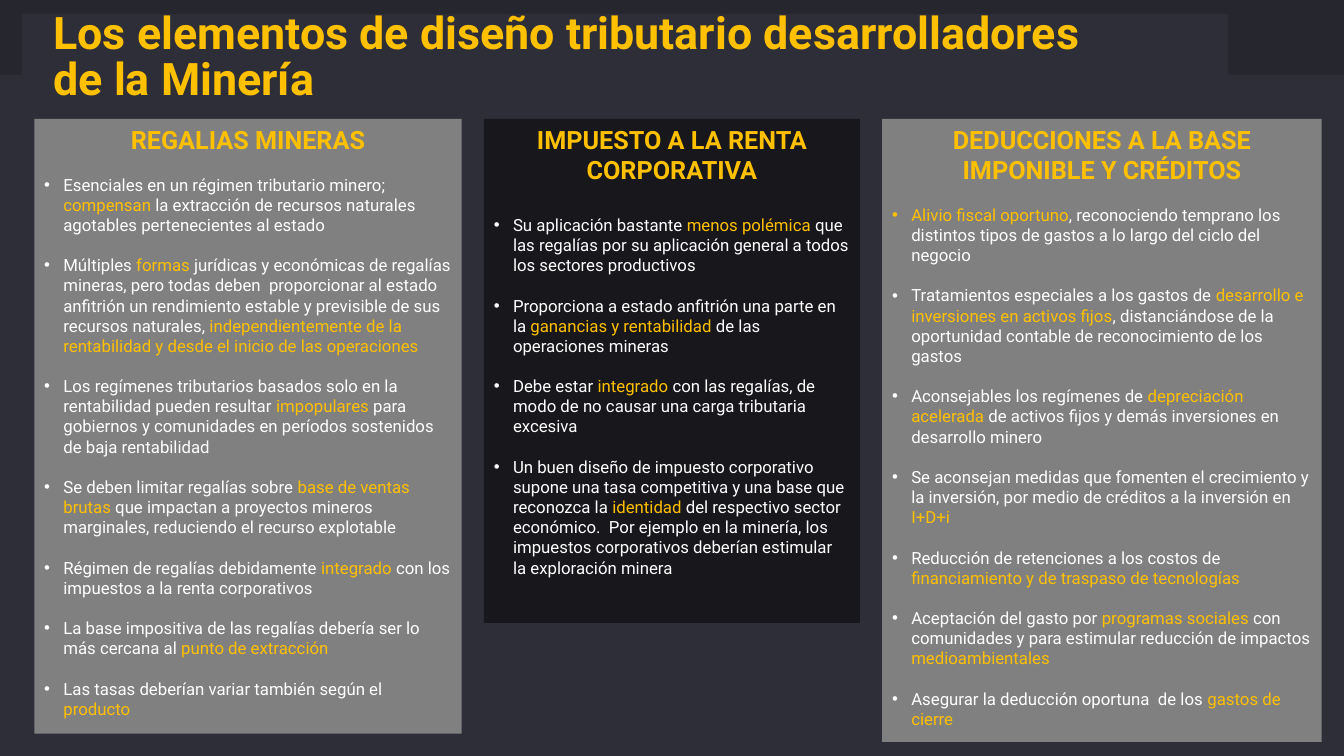
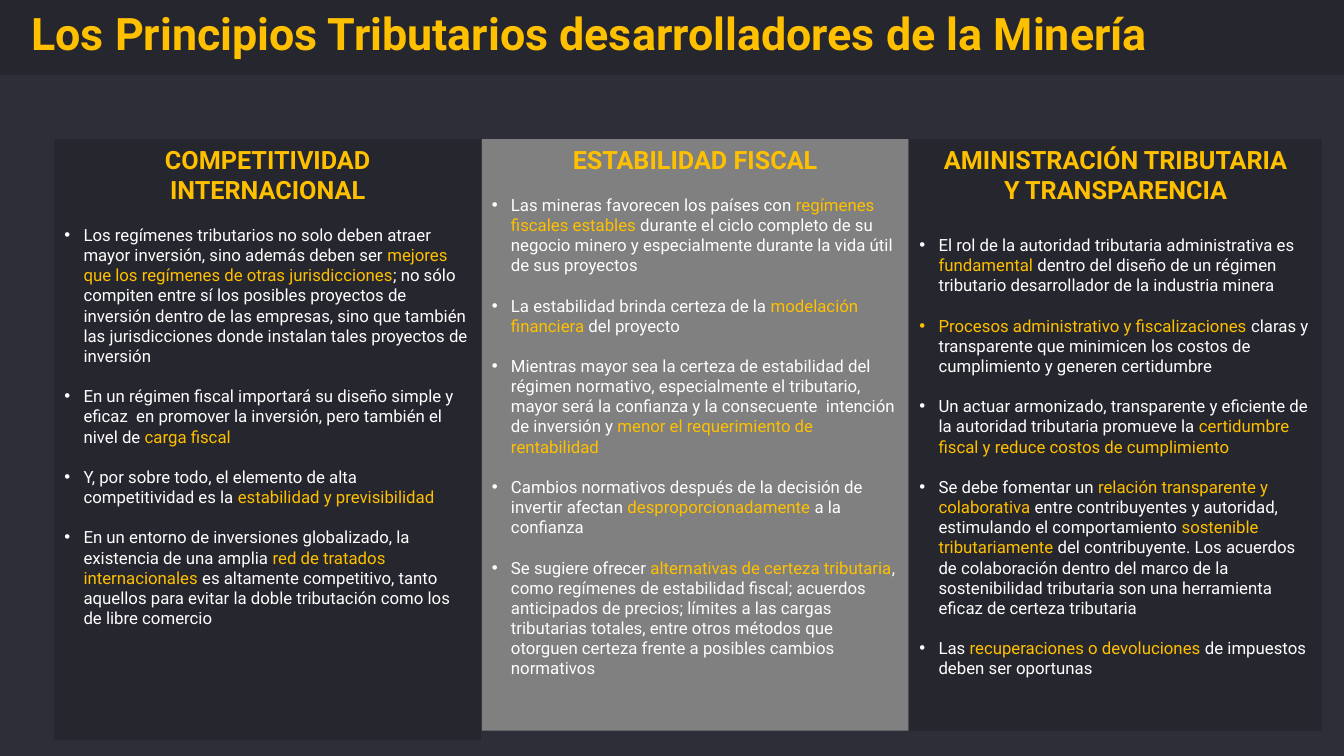
from lxml import etree
from pptx import Presentation
from pptx.dml.color import RGBColor
from pptx.enum.shapes import MSO_SHAPE
from pptx.enum.text import MSO_ANCHOR, MSO_AUTO_SIZE, PP_ALIGN
from pptx.oxml.ns import qn
from pptx.util import Inches, Pt

RECT = MSO_SHAPE.RECTANGLE
TOP, MIDDLE = MSO_ANCHOR.TOP, MSO_ANCHOR.MIDDLE
LEFT, CENTER = PP_ALIGN.LEFT, PP_ALIGN.CENTER

BACK = RGBColor(0x2E, 0x2E, 0x38)
DARK = RGBColor(0x26, 0x26, 0x2E)
BLACK = RGBColor(0x17, 0x17, 0x1C)
GRAY = RGBColor(0x80, 0x80, 0x80)
GOLD = RGBColor(0xFF, 0xC0, 0x00)
WHITE = RGBColor(0xFF, 0xFF, 0xFF)

FONT = "Roboto"
WIDE, HIGH = 13.33, 7.5
BAND = 0.74
INDENT = 0.19
LINE = 1.2
HEAD, BODY = 18, 12

# Text between asterisks is shown in gold.
SLIDES = [
    {
        "title": "Los elementos de diseño tributario desarrolladores\nde la Minería",
        "box": (0.22, 0.14, 11.96, 0.89),
        "fill": BACK,
        "start": (0.34, 1.18),
        "gap": 0.22,
        "cards": [
            ("REGALIAS MINERAS", 4.24, 6.1, GRAY, BODY, [
                "Esenciales en un régimen tributario minero; *compensan* la extracción de recursos naturales agotables pertenecientes al estado",
                "Múltiples *formas* jurídicas y económicas de regalías mineras, pero todas deben  proporcionar al estado anfitrión un rendimiento estable y previsible de sus recursos naturales, *independientemente de la rentabilidad y desde el inicio de las operaciones*",
                "Los regímenes tributarios basados solo en la rentabilidad pueden resultar *impopulares* para gobiernos y comunidades en períodos sostenidos de baja rentabilidad",
                "Se deben limitar regalías sobre *base de ventas brutas* que impactan a proyectos mineros marginales, reduciendo el recurso explotable",
                "Régimen de regalías debidamente *integrado* con los impuestos a la renta corporativos",
                "La base impositiva de las regalías debería ser lo más cercana al *punto de extracción*",
                "Las tasas deberían variar también según el *producto*",
            ]),
            ("IMPUESTO A LA RENTA CORPORATIVA", 3.73, 5, BLACK, HEAD, [
                "Su aplicación bastante *menos polémica* que las regalías por su aplicación general a todos los sectores productivos",
                "Proporciona a estado anfitrión una parte en la *ganancias y rentabilidad* de las operaciones mineras",
                "Debe estar *integrado* con las regalías, de modo de no causar una carga tributaria excesiva",
                "Un buen diseño de impuesto corporativo supone una tasa competitiva y una base que reconozca la *identidad* del respectivo sector económico.  Por ejemplo en la minería, los impuestos corporativos deberían estimular la exploración minera",
            ]),
            ("DEDUCCIONES A LA BASE IMPONIBLE Y CRÉDITOS", 4.36, 6.18, GRAY, BODY, [
                "*Alivio fiscal oportuno*, reconociendo temprano los distintos tipos de gastos a lo largo del ciclo del negocio",
                "Tratamientos especiales a los gastos de *desarrollo e inversiones en activos fijos*, distanciándose de la oportunidad contable de reconocimiento de los gastos",
                "Aconsejables los regímenes de *depreciación acelerada* de activos fijos y demás inversiones en desarrollo minero",
                "Se aconsejan medidas que fomenten el crecimiento y la inversión, por medio de créditos a la inversión en *I+D+i*",
                "Reducción de retenciones a los costos de *financiamiento y de traspaso de tecnologías*",
                "Aceptación del gasto por *programas sociales* con comunidades y para estimular reducción de impactos *medioambientales*",
                "Asegurar la deducción oportuna  de los *gastos de cierre*",
            ]),
        ],
    },
    {
        "title": "Los Principios Tributarios desarrolladores de la Minería",
        "box": (0, 0, 12.18, BAND),
        "fill": None,
        "start": (0.54, 1.38),
        "gap": 0.01,
        "cards": [
            ("COMPETITIVIDAD INTERNACIONAL", 4.23, 5.96, DARK, BODY, [
                "Los regímenes tributarios no solo deben atraer mayor inversión, sino además deben ser *mejores que los regímenes de otras jurisdicciones*; no sólo compiten entre sí los posibles proyectos de inversión dentro de las empresas, sino que también las jurisdicciones donde instalan tales proyectos de inversión",
                "En un régimen fiscal importará su diseño simple y eficaz  en promover la inversión, pero también el nivel de *carga fiscal*",
                "Y, por sobre todo, el elemento de alta competitividad es la *estabilidad y previsibilidad*",
                "En un entorno de inversiones globalizado, la existencia de una amplia *red de tratados internacionales* es altamente competitivo, tanto aquellos para evitar la doble tributación como los de libre comercio",
            ]),
            ("ESTABILIDAD FISCAL", 4.23, 5.87, GRAY, BODY, [
                "Las mineras favorecen los países con *regímenes fiscales estables* durante el ciclo completo de su negocio minero y especialmente durante la vida útil de sus proyectos",
                "La estabilidad brinda certeza de la *modelación financiera* del proyecto",
                "Mientras mayor sea la certeza de estabilidad del régimen normativo, especialmente el tributario, mayor será la confianza y la consecuente  intención de inversión y *menor el requerimiento de rentabilidad*",
                "Cambios normativos después de la decisión de invertir afectan *desproporcionadamente* a la confianza",
                "Se sugiere ofrecer *alternativas de certeza tributaria*, como regímenes de estabilidad fiscal; acuerdos anticipados de precios; límites a las cargas tributarias totales, entre otros métodos que otorguen certeza frente a posibles cambios normativos",
            ]),
            ("AMINISTRACIÓN TRIBUTARIA\nY TRANSPARENCIA", 4.09, 5.87, DARK, HEAD, [
                "El rol de la autoridad tributaria administrativa es *fundamental* dentro del diseño de un régimen tributario desarrollador de la industria minera",
                "*Procesos administrativo y fiscalizaciones* claras y transparente que minimicen los costos de cumplimiento y generen certidumbre",
                "Un actuar armonizado, transparente y eficiente de la autoridad tributaria promueve la *certidumbre fiscal y reduce costos de cumplimiento*",
                "Se debe fomentar un *relación transparente y colaborativa* entre contribuyentes y autoridad, estimulando el comportamiento *sostenible tributariamente* del contribuyente. Los acuerdos de colaboración dentro del marco de la sostenibilidad tributaria son una herramienta eficaz de certeza tributaria",
                "Las *recuperaciones o devoluciones* de impuestos deben ser oportunas",
            ]),
        ],
    },
]


def style(para, size, bold, color=None):
    font = para.font
    font.name, font.size, font.bold = FONT, Pt(size), bold
    if color is not None:
        font.color.rgb = color


def add_rect(slide, box, color):
    rect = slide.shapes.add_shape(RECT, *map(Inches, box))
    rect.shadow.inherit = False
    rect.fill.solid()
    rect.fill.fore_color.rgb = color
    rect.line.fill.background()
    return rect


def add_band(master, slide):
    band = add_rect(slide, (0, 0, WIDE, BAND), DARK)
    master.shapes._spTree.insert(2, band._element)


def set_title(slide, text, box, fill):
    title = slide.shapes.title
    title.left, title.top, title.width, title.height = map(Inches, box)
    if fill is not None:
        title.fill.solid()
        title.fill.fore_color.rgb = fill
    frame = title.text_frame
    frame.auto_size = MSO_AUTO_SIZE.NONE
    frame.word_wrap = True
    frame.vertical_anchor = MIDDLE
    frame.margin_left = Inches(0.31)
    frame.margin_top = frame.margin_right = frame.margin_bottom = 0
    para = frame.paragraphs[0]
    para.text = text
    para.alignment = LEFT
    para.line_spacing = 0.85
    style(para, 32, True, GOLD)


def add_point(frame, text, space):
    para = frame.add_paragraph()
    props = para._p.get_or_add_pPr()
    props.set("marL", str(Inches(INDENT)))
    props.set("indent", str(-Inches(INDENT)))
    etree.SubElement(props, qn("a:buFont")).set("typeface", "Arial")
    etree.SubElement(props, qn("a:buChar")).set("char", "•")
    para.alignment = LEFT
    para.space_before = Pt(space)
    style(para, BODY, False)
    for i, part in enumerate(text.split("*")):
        if part:
            run = para.add_run()
            run.text = part
            run.font.color.rgb = GOLD if i % 2 else WHITE


def add_card(slide, box, color, head, gap, points):
    frame = add_rect(slide, box, color).text_frame
    frame.word_wrap = True
    frame.vertical_anchor = TOP
    para = frame.paragraphs[0]
    para.text = head
    para.alignment = CENTER
    style(para, HEAD, True, GOLD)
    for i, text in enumerate(points):
        add_point(frame, text, LINE * (BODY if i else gap))


def main():
    prs = Presentation()
    prs.slide_width, prs.slide_height = Inches(WIDE), Inches(HIGH)
    master = prs.slide_master
    master.background.fill.solid()
    master.background.fill.fore_color.rgb = BACK
    for i, data in enumerate(SLIDES):
        slide = prs.slides.add_slide(prs.slide_layouts[5])
        if i == 0:
            add_band(master, slide)
        set_title(slide, data["title"], data["box"], data["fill"])
        left, top = data["start"]
        for head, wide, high, color, gap, points in data["cards"]:
            add_card(slide, (left, top, wide, high), color, head, gap, points)
            left += wide + data["gap"]
    prs.save("out.pptx")


if __name__ == "__main__":
    main()
